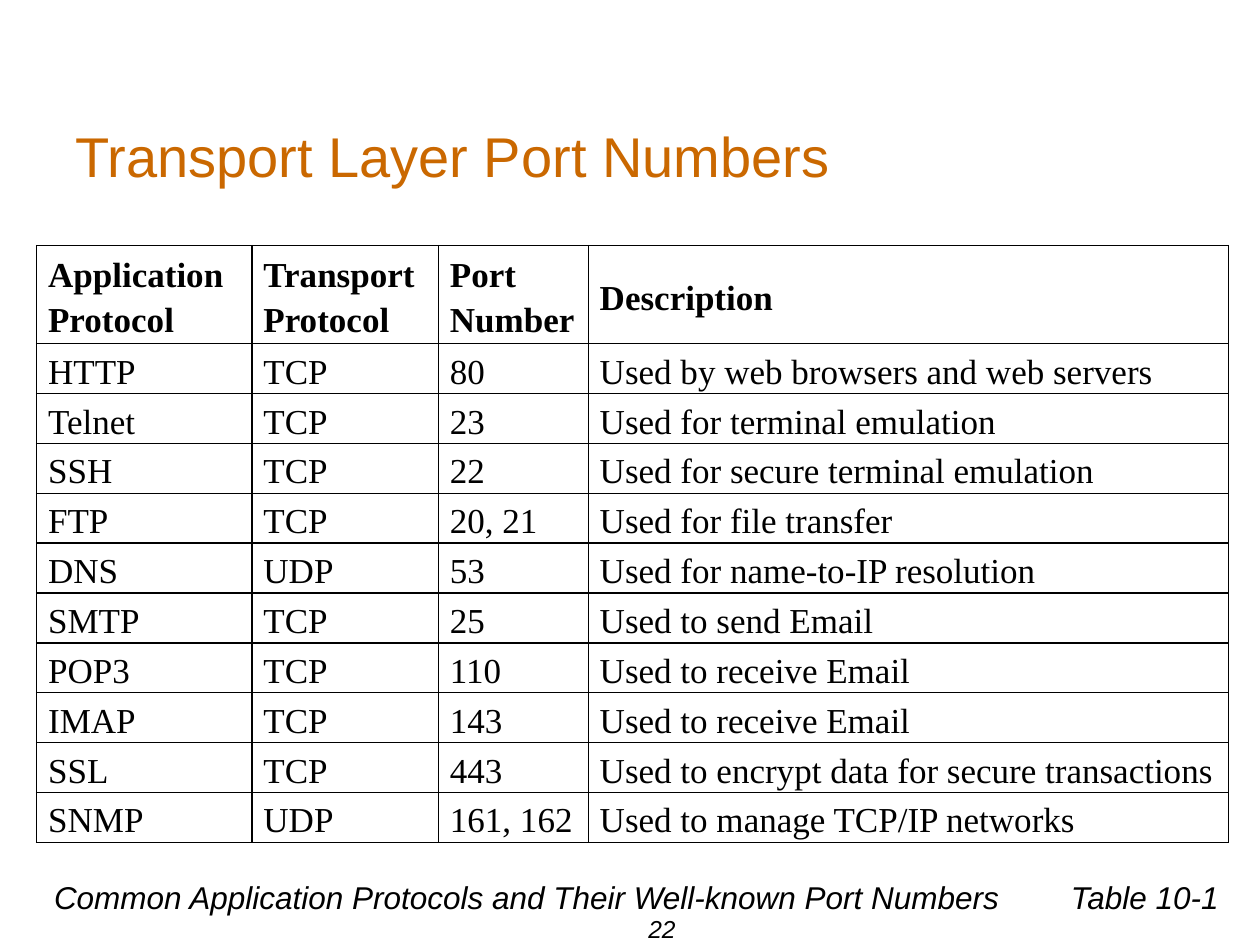
from dataclasses import dataclass

from lxml import etree
from pptx import Presentation
from pptx.dml.color import RGBColor
from pptx.enum.text import MSO_ANCHOR, PP_ALIGN
from pptx.oxml.ns import qn
from pptx.util import Cm, Pt

TOP, MIDDLE, BOTTOM = MSO_ANCHOR.TOP, MSO_ANCHOR.MIDDLE, MSO_ANCHOR.BOTTOM
LEFT, CENTER = PP_ALIGN.LEFT, PP_ALIGN.CENTER


@dataclass(frozen=True)
class Theme:
    accent: str = "CA6800"
    ink: str = "000000"
    sans: str = "Arial"
    serif: str = "Times New Roman"
    title_size: int = 32
    cell_size: int = 20
    caption_size: int = 18
    number_size: int = 14
    border: int = 1


THEME = Theme()
COLUMN_WIDTHS = (4.34, 3.76, 3.02, 12.91)
HEADER_HEIGHT = 1.96
HEADINGS = ("Application Protocol", "Transport Protocol", "Port Number", "Description")
PROTOCOLS = (
    ("HTTP", "TCP", "80", "Used by web browsers and web servers"),
    ("Telnet", "TCP", "23", "Used for terminal emulation"),
    ("SSH", "TCP", "22", "Used for secure terminal emulation"),
    ("FTP", "TCP", "20, 21", "Used for file transfer"),
    ("DNS", "UDP", "53", "Used for name-to-IP resolution"),
    ("SMTP", "TCP", "25", "Used to send Email"),
    ("POP3", "TCP", "110", "Used to receive Email"),
    ("IMAP", "TCP", "143", "Used to receive Email"),
    ("SSL", "TCP", "443", "Used to encrypt data for secure transactions"),
    ("SNMP", "UDP", "161, 162", "Used to manage TCP/IP networks"),
)


def apply(target, values):
    for name, value in values.items():
        setattr(target, name, value)


def style_font(font, color, **values):
    apply(font, values)
    font.color.rgb = RGBColor.from_string(color)


def add_text(slide, box, text, size, color=THEME.ink, italic=True,
             align=LEFT, anchor=TOP, wrap=True, margin_bottom=0.13):
    frame = slide.shapes.add_textbox(*map(Cm, box)).text_frame
    apply(frame, {"word_wrap": wrap, "vertical_anchor": anchor,
                  "margin_bottom": Cm(margin_bottom)})
    paragraph = frame.paragraphs[0]
    paragraph.alignment = align
    run = paragraph.add_run()
    run.text = text
    style_font(run.font, color, name=THEME.sans, size=Pt(size), italic=italic)


def add_borders(cell):
    properties = cell._tc.get_or_add_tcPr()
    for position, side in enumerate(("a:lnL", "a:lnR", "a:lnT", "a:lnB")):
        line = etree.Element(qn(side), w=str(Pt(THEME.border)))
        fill = etree.SubElement(line, qn("a:solidFill"))
        etree.SubElement(fill, qn("a:srgbClr"), val=THEME.ink)
        properties.insert(position, line)


def fill_cell(cell, text, bold):
    apply(cell, {"text": text, "vertical_anchor": MIDDLE,
                 "margin_left": Cm(0.23), "margin_right": Cm(0.23),
                 "margin_top": Cm(0.03), "margin_bottom": 0})
    cell.fill.background()
    add_borders(cell)
    paragraph = cell.text_frame.paragraphs[0]
    paragraph.line_spacing = 1.15
    style_font(paragraph.runs[0].font, THEME.ink, name=THEME.serif,
               size=Pt(THEME.cell_size), bold=bold)


def add_port_table(slide, box):
    rows = (HEADINGS, *PROTOCOLS)
    table = slide.shapes.add_table(len(rows), len(HEADINGS), *map(Cm, box)).table
    apply(table, {"first_row": False, "horz_banding": False})
    for column, width in zip(table.columns, COLUMN_WIDTHS):
        column.width = Cm(width)
    body_height = (box[3] - HEADER_HEIGHT) / len(PROTOCOLS)
    for index, (row, texts) in enumerate(zip(table.rows, rows)):
        row.height = Cm(body_height if index else HEADER_HEIGHT)
        for cell, text in zip(row.cells, texts):
            fill_cell(cell, text, bold=index == 0)


def add_footer(slide, box):
    left, top, width, height = box
    # Table number and caption
    add_text(slide, (left + 20.5, top, 3.5, 1.02), "Table 10-1",
             THEME.caption_size, wrap=False)
    add_text(slide, (left, top, width, 1.02),
             "Common Application Protocols and Their Well-known Port Numbers",
             THEME.caption_size)
    # Page number, resting on the lower edge
    add_text(slide, (left + 8.48, top + 0.15, 8.05, height - 0.15), "22",
             THEME.number_size, align=CENTER, anchor=BOTTOM, margin_bottom=0.04)


def main():
    deck = Presentation()
    apply(deck, {"slide_width": Cm(25.4), "slide_height": Cm(19.05)})
    slide = deck.slides.add_slide(deck.slide_layouts[6])
    # Title
    add_text(slide, (1.27, 2.34, 22.86, 1.6), "Transport Layer Port Numbers",
             THEME.title_size, THEME.accent, italic=False, anchor=MIDDLE)
    # Protocol table and footer
    add_port_table(slide, (0.74, 4.95, sum(COLUMN_WIDTHS), 11.96))
    add_footer(slide, (0.84, 17.58, 23.29, 1.47))
    deck.save("out.pptx")


if __name__ == "__main__":
    main()
